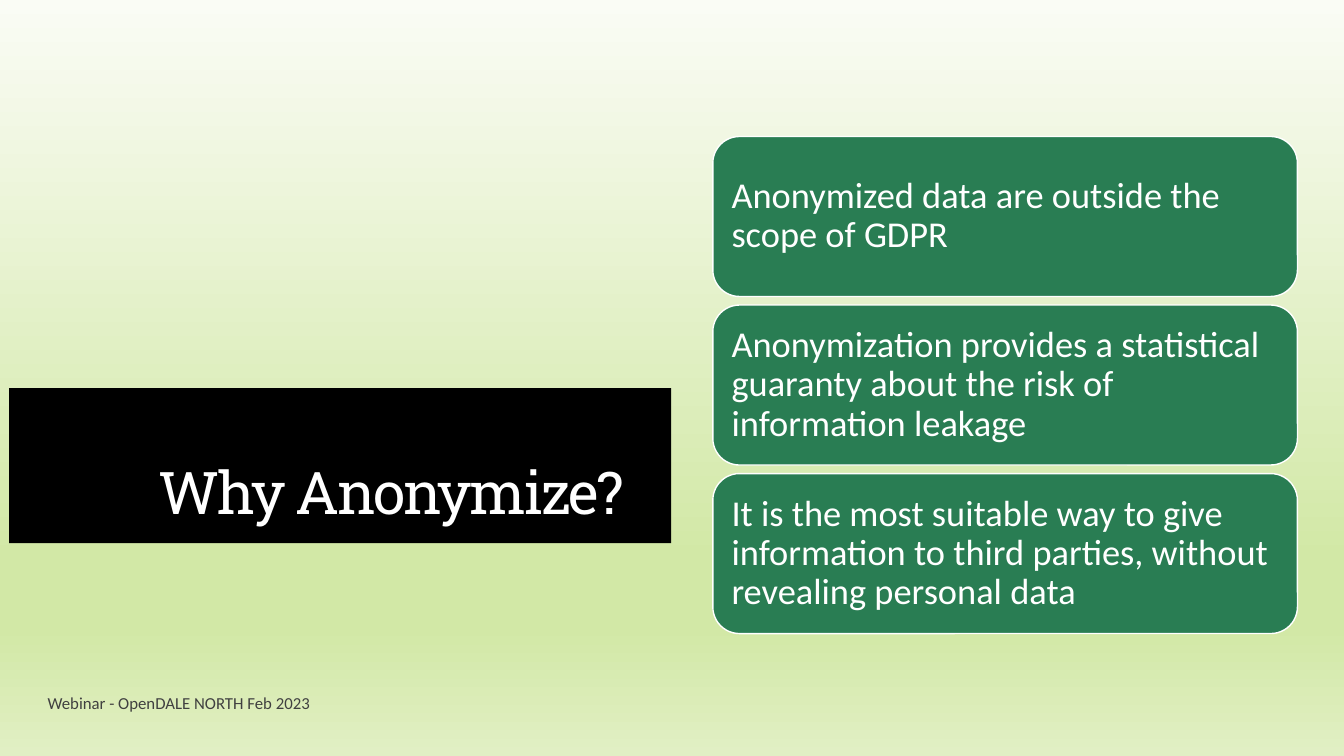
import copy

from pptx import Presentation
from pptx.dml.color import RGBColor
from pptx.enum import shapes, text
from pptx.oxml.ns import qn
from pptx.util import Pt

BLACK = RGBColor(0x00, 0x00, 0x00)
WHITE = RGBColor(0xFF, 0xFF, 0xFF)
GREEN = RGBColor(0x29, 0x7D, 0x53)
GREY = RGBColor(0x40, 0x40, 0x40)
PALE = RGBColor(0xFA, 0xFC, 0xF5)
LIME = RGBColor(0xD2, 0xE8, 0xA6)
LIGHT_LIME = RGBColor(0xE1, 0xEF, 0xC4)

BACKGROUND_STOPS = [(0, PALE), (0.74, LIME), (0.83, LIME), (1, LIGHT_LIME)]
REASONS = [
    "Anonymized data are outside the scope of GDPR",
    "Anonymization provides a statistical guaranty about the risk of "
    "information leakage",
    "It is the most suitable way to give information to third parties, "
    "without revealing personal data",
]
CARD_TOP, CARD_STEP = 97.5, 120.4


def set_background(s):
    fill = s.background.fill
    fill.gradient()
    fill.gradient_angle = 270
    # A new gradient has two stops: add the missing ones
    stop_list = s.background._cSld.find(".//" + qn("a:gsLst"))
    while len(stop_list) < len(BACKGROUND_STOPS):
        stop_list.append(copy.deepcopy(stop_list[0]))
    for stop, (position, color) in zip(fill.gradient_stops, BACKGROUND_STOPS):
        stop.position = position
        stop.color.rgb = color


def write_text(sp, content, *, size, color, font="Calibri", insets=(0, 0, 0, 0),
               anchor=text.MSO_ANCHOR.MIDDLE, align=text.PP_ALIGN.LEFT,
               line_spacing=None, space_after=None, tracking=None):
    tf = sp.text_frame
    tf.word_wrap = True
    tf.vertical_anchor = anchor
    (tf.margin_left, tf.margin_top,
     tf.margin_right, tf.margin_bottom) = [Pt(i) for i in insets]
    p = tf.paragraphs[0]
    p.alignment = align
    p.line_spacing = line_spacing
    if space_after is not None:
        p.space_after = Pt(space_after)
    r = p.add_run()
    r.text = content
    r.font.name = font
    r.font.size = Pt(size)
    r.font.color.rgb = color
    if tracking is not None:
        r.font._element.set("spc", str(round(tracking * 100)))


def add_box(s, kind, left, top, width, height, fill, line=None):
    sp = s.shapes.add_shape(kind, Pt(left), Pt(top), Pt(width), Pt(height))
    sp.shadow.inherit = False
    sp.fill.solid()
    sp.fill.fore_color.rgb = fill
    if line is None:
        sp.line.fill.background()
    else:
        sp.line.color.rgb = line
        sp.line.width = Pt(1)
    return sp


def add_title(s, content):
    sp = add_box(s, shapes.MSO_SHAPE.RECTANGLE, 6.5, 277.2, 473, 110.9, BLACK)
    write_text(sp, content, size=42, color=WHITE, font="Roboto Slab",
               insets=(22.3, 0, 33.8, 11.5), anchor=text.MSO_ANCHOR.BOTTOM,
               align=text.PP_ALIGN.RIGHT, line_spacing=0.9, tracking=-1.5)


def add_card(s, top, content):
    sp = add_box(s, shapes.MSO_SHAPE.ROUNDED_RECTANGLE, 509.2, top, 417.6, 114.3,
                 GREEN, WHITE)
    write_text(sp, content, size=26, color=WHITE, insets=(7.8, 7.8, 7.8, 7.8),
               line_spacing=0.9)


def add_footer(s, content):
    tb = s.shapes.add_textbox(Pt(34), Pt(487.5), Pt(692), Pt(28.8))
    write_text(tb, content, size=12, color=GREY, space_after=6)


def main():
    prs = Presentation()
    prs.slide_width, prs.slide_height = Pt(960), Pt(540)
    s = prs.slides.add_slide(prs.slide_layouts[6])
    set_background(s)

    # Title band on the left
    add_title(s, "Why Anonymize?")

    # Column of reasons on the right
    for i, reason in enumerate(REASONS):
        add_card(s, CARD_TOP + i * CARD_STEP, reason)

    # Event line
    add_footer(s, "Webinar - OpenDALE NORTH Feb 2023")

    prs.save("out.pptx")


if __name__ == "__main__":
    main()
